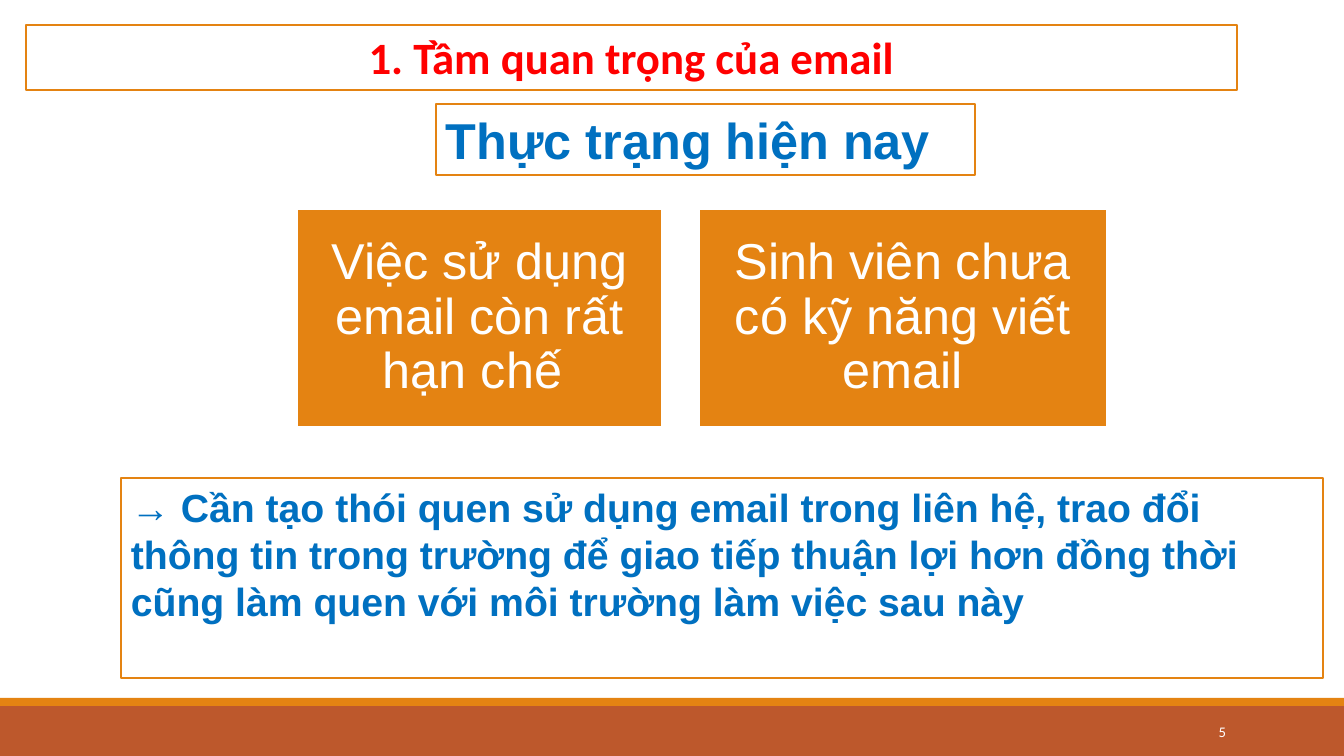
from pptx import Presentation
from pptx.dml.color import RGBColor
from pptx.enum.shapes import MSO_SHAPE as Shape
from pptx.enum.text import MSO_ANCHOR as Anchor, PP_ALIGN as Align
from pptx.util import Emu, Pt

COLORS = {
    "orange": "E48312",
    "rust": "BD582C",
    "white": "FFFFFF",
    "red": "FF0000",
    "blue": "0070C0",
}


def px(n):
    """Turn pixels (100.8 to the inch) into EMU."""
    return Emu(round(n * 914400 / 100.8))


def rgb(name):
    return RGBColor.from_string(COLORS[name])


class Page:
    """Holds the current slide and the shared style."""

    def __init__(self, slide):
        self.slide = slide
        self.font = "Arial"

    def box(self, at, fill, line=None):
        shape = self.slide.shapes.add_shape(Shape.RECTANGLE, *map(px, at))
        shape.shadow.inherit = False
        shape.fill.solid()
        shape.fill.fore_color.rgb = rgb(fill)
        if line:
            shape.line.color.rgb = rgb(line)
            shape.line.width = Pt(1.25)
        else:
            shape.line.fill.background()
        return shape

    def label(self, shape, text, size, color, bold=False, font=None,
              align=Align.LEFT, anchor=Anchor.TOP, space=1.0):
        """Put one styled paragraph into the shape."""
        frame = shape.text_frame
        frame.word_wrap = True
        frame.vertical_anchor = anchor
        par = frame.paragraphs[0]
        par.text = text
        par.alignment = align
        par.line_spacing = space
        par.font.name = font or self.font
        par.font.size = Pt(size)
        par.font.bold = bold
        par.font.color.rgb = rgb(color)

    def panel(self, at, text, size, color="blue", **style):
        """White box with an orange outline and bold text."""
        shape = self.box(at, "white", "orange")
        self.label(shape, text, size, color, bold=True, **style)

    def card(self, at, text):
        """Orange box with large centred text."""
        shape = self.box(at, "orange", "white")
        frame = shape.text_frame
        frame.margin_left = frame.margin_right = px(15)
        frame.margin_top = frame.margin_bottom = px(15)
        self.label(shape, text, 36, "white", align=Align.CENTER,
                   anchor=Anchor.MIDDLE, space=0.9)

    def number(self, at, text):
        shape = self.slide.shapes.add_textbox(*map(px, at))
        self.label(shape, text, 10.5, "white", font="Calibri",
                   align=Align.RIGHT, anchor=Anchor.MIDDLE)


def main():
    deck = Presentation()
    deck.slide_width, deck.slide_height = px(1344), px(756)
    page = Page(deck.slides.add_slide(deck.slide_layouts[6]))

    page.box((0, 706, 1344, 50), "rust")
    page.box((0, 698, 1344, 8), "orange")

    page.panel((26, 25, 1211, 65), "1. Tầm quan trọng của email", 32, "red",
               font="Calibri", align=Align.CENTER)
    page.panel((436, 104, 539, 71), "Thực trạng hiện nay", 36)

    cards = [
        (297, 365, "Việc sử dụng email còn rất hạn chế "),
        (699, 408, "Sinh viên chưa có kỹ năng viết email"),
    ]
    for left, width, text in cards:
        page.card((left, 209, width, 218), text)

    page.panel((121, 478, 1202, 200),
               "→ Cần tạo thói quen sử dụng email trong liên hệ, trao đổi "
               "thông tin trong trường để giao tiếp thuận lợi hơn đồng thời "
               "cũng làm quen với môi trường làm việc sau này", 28)
    page.number((1092, 712, 144, 40), "5")

    deck.save("out.pptx")


if __name__ == "__main__":
    main()
